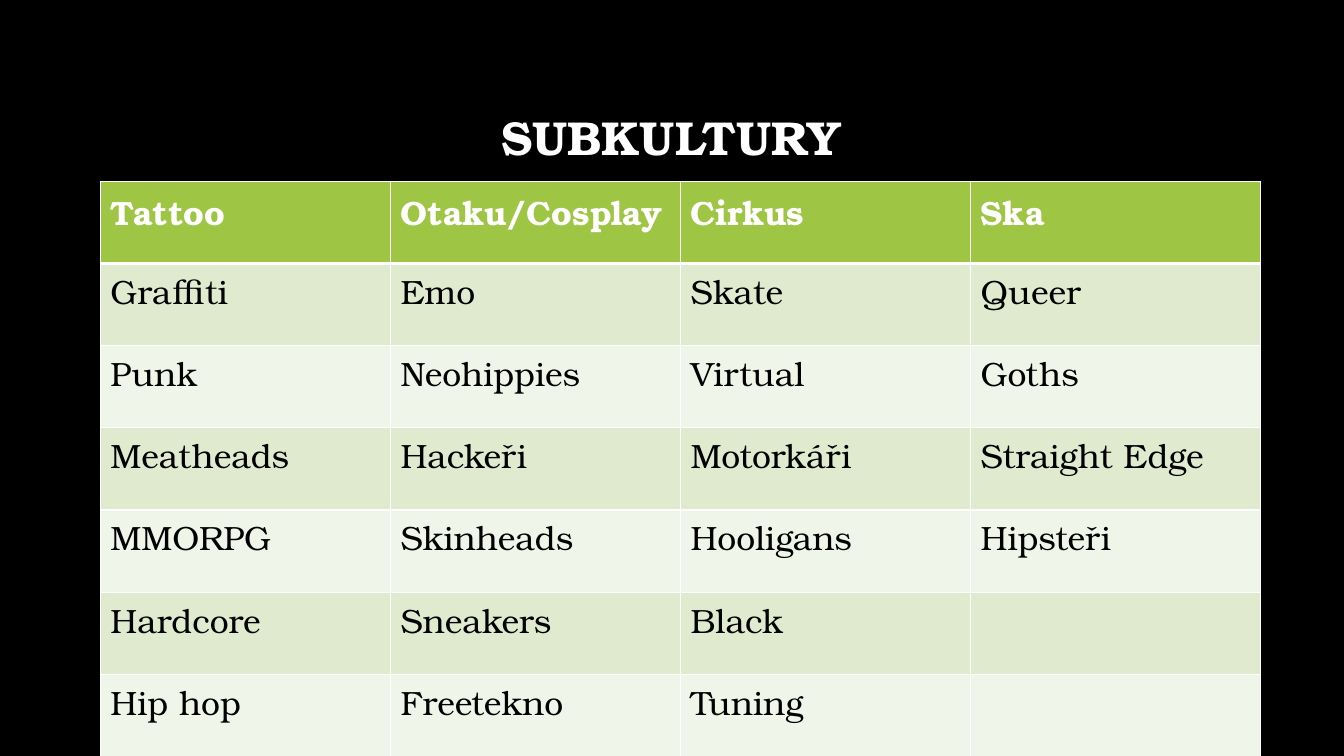
import pptx
import pptx.dml.color
import pptx.enum.text
import pptx.oxml
import pptx.oxml.ns
import pptx.util
from pptx.util import Cm

RGB = pptx.dml.color.RGBColor
BLACK = RGB(0x00, 0x00, 0x00)
WHITE = RGB(0xFF, 0xFF, 0xFF)
GREEN = RGB(0x9E, 0xC5, 0x44)
BANDS = [RGB(0xF0, 0xF5, 0xE9), RGB(0xDF, 0xEA, 0xCF)]
FACE = "TeX Gyre Bonum"

ROWS = [
    ["Tattoo", "Otaku/Cosplay", "Cirkus", "Ska"],
    ["Graffiti", "Emo", "Skate", "Queer"],
    ["Punk", "Neohippies", "Virtual", "Goths"],
    ["Meatheads", "Hackeři", "Motorkáři", "Straight Edge"],
    ["MMORPG", "Skinheads", "Hooligans", "Hipsteři"],
    ["Hardcore", "Sneakers", "Black", ""],
    ["Hip hop", "Freetekno", "Tuning", ""],
]


def style(para, size, color, bold):
    for run in para.runs:
        run.font.name = FACE
        run.font.size = pptx.util.Pt(size)
        run.font.color.rgb = color
        run.font.bold = bold


def edge(cell, side, width):
    """Add a white border; call before the cell gets its fill."""
    cell._tc.get_or_add_tcPr().append(pptx.oxml.parse_xml(
        f'<a:{side} {pptx.oxml.ns.nsdecls("a")} w="{pptx.util.Pt(width)}">'
        f'<a:solidFill><a:srgbClr val="{WHITE}"/></a:solidFill></a:{side}>'))


deck = pptx.Presentation()
deck.slide_width = Cm(33.87)
deck.slide_height = Cm(19.05)
slide = deck.slides.add_slide(deck.slide_layouts[6])
slide.background.fill.solid()
slide.background.fill.fore_color.rgb = BLACK

# Title
title = slide.shapes.add_textbox(Cm(2.54), Cm(1.7), Cm(28.75), Cm(3.68))
frame = title.text_frame
frame.word_wrap = True
frame.vertical_anchor = pptx.enum.text.MSO_ANCHOR.MIDDLE
frame.text = "SUBKULTURY"
head = frame.paragraphs[0]
head.alignment = pptx.enum.text.PP_ALIGN.CENTER
head.line_spacing = 0.9
style(head, 34, WHITE, True)

# Table of subcultures
wide, high = Cm(7.31), Cm(2.07)
count = len(ROWS[0])
table = slide.shapes.add_table(
    len(ROWS), count, Cm(2.53), Cm(4.57), wide * count, high * len(ROWS)).table
for col in table.columns:
    col.width = wide
for i, names in enumerate(ROWS):
    table.rows[i].height = high
    top = i == 0
    for j, name in enumerate(names):
        cell = table.cell(i, j)
        for side in ("lnL", "lnR", "lnT", "lnB"):
            thick = (top and side == "lnB") or (i == 1 and side == "lnT")
            edge(cell, side, 3 if thick else 1)
        cell.fill.solid()
        cell.fill.fore_color.rgb = GREEN if top else BANDS[i % 2]
        cell.text_frame.text = name
        style(cell.text_frame.paragraphs[0], 24, WHITE if top else BLACK, top)

deck.save("out.pptx")
